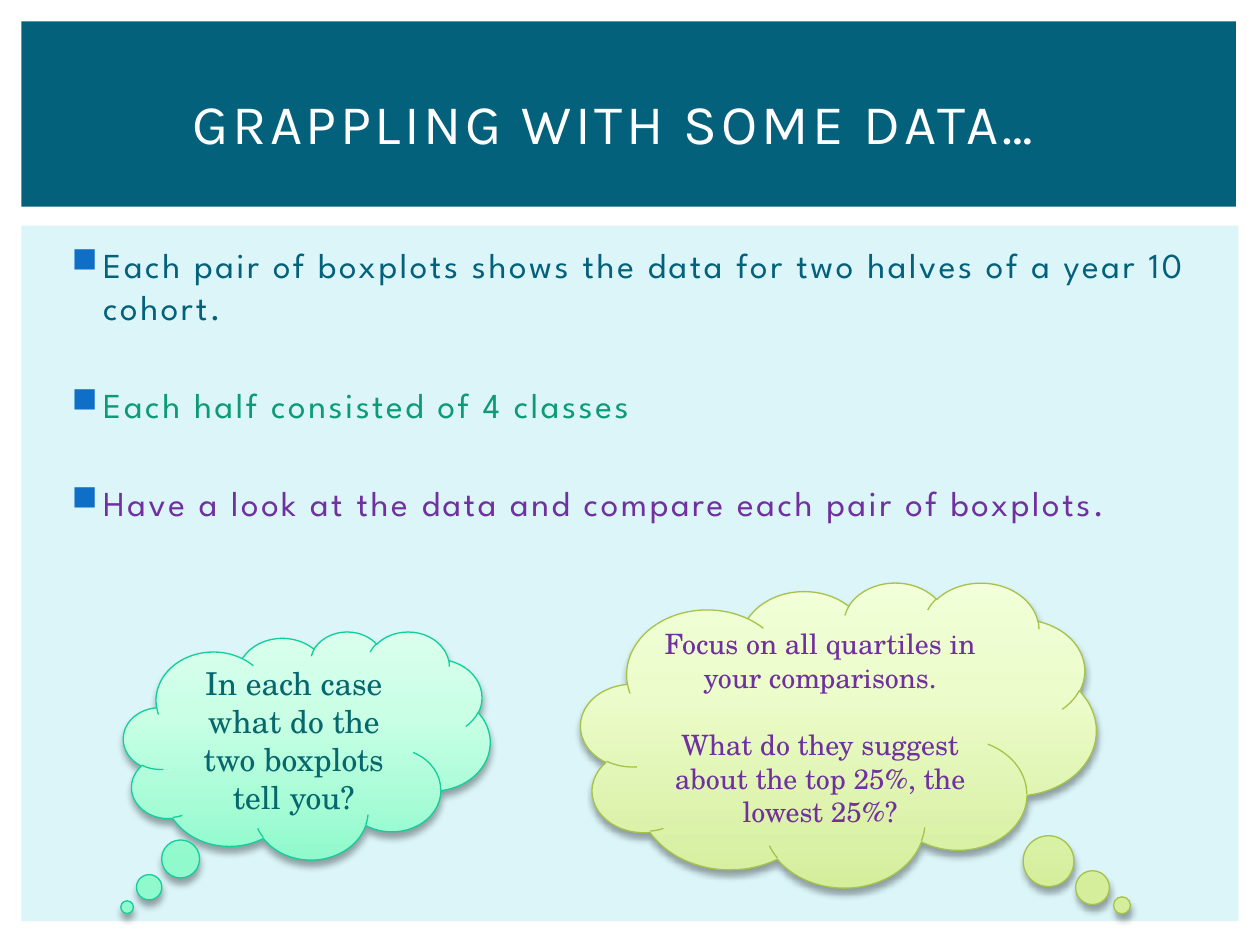
"""Build a slide on comparing pairs of boxplots, with two thought clouds."""
import dataclasses
import typing

import lxml.etree
import pptx
import pptx.dml.color
import pptx.enum.shapes
import pptx.enum.text
import pptx.oxml.ns
import pptx.util

HUES = {
    "white": "FFFFFF", "pale": "DBF5F9", "teal": "04617B", "green": "0C9B74",
    "plum": "7030A0", "blue": "0F6FC6", "pine": "06686C", "black": "000000",
    "mint": "10CF9B", "mint_low": "90FACC", "mint_mid": "CAFFE6", "mint_top": "DAFFED",
    "lime": "A5C249", "lime_low": "D4EE9C", "lime_mid": "ECFCCB", "lime_top": "F2FFD9",
}
COLS, ROWS = 100, 75
WIDE, HIGH = pptx.util.Inches(10), pptx.util.Inches(7.5)
FORMS = pptx.enum.shapes.MSO_SHAPE
ALIGN = pptx.enum.text.PP_ALIGN
MIDDLE = pptx.enum.text.MSO_ANCHOR.MIDDLE


class Area(typing.NamedTuple):
    col: float
    row: float
    cols: float
    rows: float

    def place(self) -> tuple[int, ...]:
        return (round(self.col * WIDE / COLS), round(self.row * HIGH / ROWS),
                round(self.cols * WIDE / COLS), round(self.rows * HIGH / ROWS))


class Style(typing.NamedTuple):
    font: str
    size: float
    hue: str
    track: float = 0


class Point(typing.NamedTuple):
    text: str
    hue: str
    gap: float


@dataclasses.dataclass
class Cloud:
    area: Area
    tail: tuple[float, float]
    tint: str
    style: Style
    lines: list[str]


PANELS = [(Area(1.7, 17.9, 96.6, 55.2), "pale"), (Area(1.7, 1.7, 96.4, 14.7), "teal")]
POINTS = [
    Point("Each pair of boxplots shows the data for two halves of a year 10 cohort.", "teal", 4),
    Point("Each half consisted of 4 classes", "green", 32),
    Point("Have a look at the data and compare each pair of boxplots.", "plum", 32),
]
CLOUDS = [
    Cloud(Area(9.8, 50.1, 29.1, 18.1), (-0.49, 0.71), "mint",
          Style("TeX Gyre Schola", 18, "pine"),
          ["In each case what do the two boxplots tell you?"]),
    Cloud(Area(46.1, 46.2, 40.9, 24.2), (0.55, 0.56), "lime",
          Style("TeX Gyre Schola", 16, "plum"),
          ["Focus on all quartiles in your comparisons.",
           "What do they suggest about the top 25%, the lowest 25%?"]),
]


def shade(name: str) -> pptx.dml.color.RGBColor:
    return pptx.dml.color.RGBColor.from_string(HUES[name])


def add_node(host, tag: str, **attrs):
    node = lxml.etree.SubElement(host, pptx.oxml.ns.qn(tag))
    for key, value in attrs.items():
        node.set(key, str(value))
    return node


def add_run(para, text: str, style: Style) -> None:
    run = para.add_run()
    run.text = text
    run.font.name = style.font
    run.font.size = pptx.util.Pt(style.size)
    run.font.color.rgb = shade(style.hue)
    if style.track:
        run.font._element.set("spc", str(round(style.track * 100)))


def next_para(frame, index: int):
    return frame.add_paragraph() if index else frame.paragraphs[0]


def draw_panel(slide, area: Area, hue: str) -> None:
    panel = slide.shapes.add_shape(FORMS.RECTANGLE, *area.place())
    panel.shadow.inherit = False
    panel.fill.solid()
    panel.fill.fore_color.rgb = shade(hue)
    panel.line.fill.background()


def add_frame(slide, area: Area):
    frame = slide.shapes.add_textbox(*area.place()).text_frame
    frame.word_wrap = True
    return frame


def draw_title(slide) -> None:
    frame = add_frame(slide, Area(4.2, 3.9, 91.7, 11.5))
    frame.vertical_anchor = MIDDLE
    frame.margin_right = round(0.037 * WIDE)
    para = frame.paragraphs[0]
    para.alignment = ALIGN.CENTER
    add_run(para, "GRAPPLING WITH SOME DATA…", Style("Karla", 32, "white", 2))


def draw_points(slide, points: list[Point]) -> None:
    frame = add_frame(slide, Area(4.2, 18.8, 91.9, 28.7))
    for index, point in enumerate(points):
        para = next_para(frame, index)
        para.space_before = pptx.util.Pt(point.gap)
        props = para._p.get_or_add_pPr()
        props.set("marL", str(pptx.util.Inches(0.3)))
        props.set("indent", str(pptx.util.Inches(-0.25)))
        add_node(add_node(props, "a:buClr"), "a:srgbClr", val=HUES["blue"])
        add_node(props, "a:buChar", char="■")
        add_run(para, point.text, Style("League Spartan", 20, point.hue, 1.5))


def fill_cloud(shape, tint: str) -> None:
    shape.fill.gradient()
    shape.fill.gradient_angle = 90
    props = shape._element.spPr
    stops = props.find(".//" + pptx.oxml.ns.qn("a:gsLst"))
    for stop in list(stops):
        stops.remove(stop)
    for share, level in ((0, "low"), (65, "mid"), (100, "top")):
        stop = add_node(stops, "a:gs", pos=share * 1000)
        add_node(stop, "a:srgbClr", val=HUES[f"{tint}_{level}"])


def cast_shadow(shape) -> None:
    shape.shadow.inherit = False
    host = shape._element.spPr.find(pptx.oxml.ns.qn("a:effectLst"))
    cast = add_node(host, "a:outerShdw", blurRad=pptx.util.Pt(4), dist=pptx.util.Pt(3),
                    dir=90 * 60000, rotWithShape=0)
    add_node(add_node(cast, "a:srgbClr", val=HUES["black"]), "a:alpha", val=35000)


def draw_cloud(slide, cloud: Cloud) -> None:
    shape = slide.shapes.add_shape(FORMS.CLOUD_CALLOUT, *cloud.area.place())
    for index, value in enumerate(cloud.tail):
        shape.adjustments[index] = value
    fill_cloud(shape, cloud.tint)
    shape.line.color.rgb = shade(cloud.tint)
    shape.line.width = pptx.util.Pt(0.75)
    cast_shadow(shape)
    frame = shape.text_frame
    frame.word_wrap = True
    frame.vertical_anchor = MIDDLE
    for index, text in enumerate(cloud.lines):
        para = next_para(frame, index)
        para.alignment = ALIGN.CENTER
        if index:
            para.space_before = pptx.util.Pt(1.2 * cloud.style.size)
        add_run(para, text, cloud.style)


def main() -> None:
    deck = pptx.Presentation()
    deck.slide_width, deck.slide_height = WIDE, HIGH
    slide = deck.slides.add_slide(deck.slide_layouts[6])
    for area, hue in PANELS:
        draw_panel(slide, area, hue)
    draw_points(slide, POINTS)
    draw_title(slide)
    for cloud in CLOUDS:
        draw_cloud(slide, cloud)
    deck.save("out.pptx")


if __name__ == "__main__":
    main()
